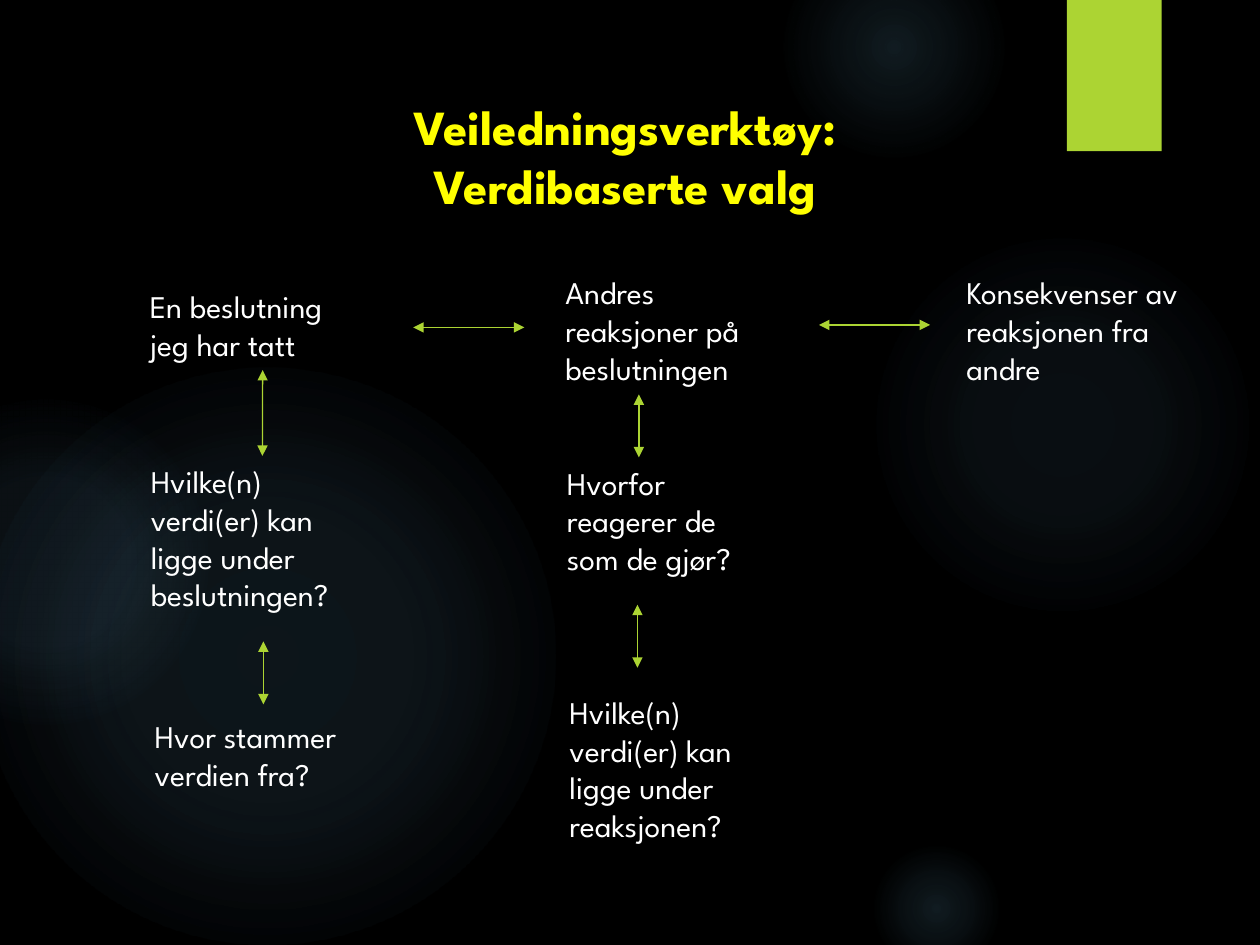
import pptx
import pptx.util
import pptx.dml.color
import pptx.enum.shapes
import pptx.enum.text
import pptx.oxml
import pptx.oxml.ns
from pptx.util import Cm, Pt

THEME = {
    "background": "000000", "accent": "ACD433", "glow": "7AC4F0",
    "body": {"name": "League Spartan", "size": Pt(18), "bold": False, "color": "FFFFFF"},
    "title": {"name": "League Spartan", "size": Pt(28), "bold": True, "color": "FFFF00"},
    "line_width": Pt(0.75),
}

# Content; all places and sizes are in cm
TITLE = (["Veiledningsverktøy:", "Verdibaserte valg"], (7.57, 1.83, 10.06, 2.64))
STEPS = {
    "decision": (["En beslutning", "jeg har tatt"], (2.77, 5.66, 5.05, 1.8)),
    "decision values": (["Hvilke(n) verdi(er) kan ligge under beslutningen?"], (2.79, 9.19, 5, 3.33)),
    "reactions": (["Andres reaksjoner på beslutningen"], (11.15, 5.38, 4.9, 2.57)),
    "value origin": (["Hvor stammer verdien fra?"], (2.87, 14.33, 5, 1.8)),
    "reasons": (["Hvorfor reagerer de som de gjør?"], (11.18, 9.22, 4.6, 2.57)),
    "consequences": (["Konsekvenser av reaksjonen fra andre"], (19.23, 5.38, 4.83, 2.57)),
    "reaction values": (["Hvilke(n) verdi(er) kan ligge under reaksjonen?"], (11.23, 13.84, 4.83, 3.33)),
}
JOINED = [("decision", "decision values")]
DOWN_ARROWS = [(5.31, 12.93), (12.88, 7.95), (12.85, 12.19)]
ACROSS_ARROWS = [(8.33, 6.6), (16.51, 6.55)]
DOWN_LENGTH, ACROSS_LENGTH = 1.27, 2.24
# left, top, diameter, (stop %, opacity %)
GLOWS = [
    (17.5, 4.65, 7.82, [(0, 7), (36, 6), (69, 0)]),
    (15.8, -1.27, 4.45, [(0, 14), (36, 7), (73, 0)]),
    (17.5, 16.94, 2.74, [(0, 14), (36, 7), (66, 0)]),
    (-0.43, 7.42, 11.63, [(0, 11), (36, 10), (75, 0)]),
    (-2.34, 8.05, 6.55, [(0, 8), (36, 8), (72, 0)]),
]
TAB = (21.51, 0, 1.91, 3.05)


def rgb(code):
    return pptx.dml.color.RGBColor.from_string(code)


def add_plain_shape(slide, kind, place):
    shape = slide.shapes.add_shape(kind, *map(Cm, place))
    shape.shadow.inherit = False
    shape.line.fill.background()
    return shape


def add_glow(slide, left, top, diameter, stops):
    glow = add_plain_shape(slide, pptx.enum.shapes.MSO_SHAPE.OVAL, (left, top, diameter, diameter))
    stop_xml = "".join(
        f'<a:gs pos="{position * 1000}"><a:srgbClr val="{THEME["glow"]}">'
        f'<a:alpha val="{opacity * 1000}"/></a:srgbClr></a:gs>'
        for position, opacity in stops)
    gradient = pptx.oxml.parse_xml(
        f'<a:gradFill {pptx.oxml.ns.nsdecls("a")} rotWithShape="1"><a:gsLst>{stop_xml}</a:gsLst>'
        '<a:path path="circle"><a:fillToRect l="50000" t="50000" r="50000" b="50000"/></a:path>'
        '</a:gradFill>')
    glow._element.spPr.find(pptx.oxml.ns.qn("a:prstGeom")).addnext(gradient)


def add_text(slide, lines, place, style, wrap=True, align=None):
    box = slide.shapes.add_textbox(*map(Cm, place))
    frame = box.text_frame
    frame.word_wrap = wrap
    frame.auto_size = pptx.enum.text.MSO_AUTO_SIZE.SHAPE_TO_FIT_TEXT
    frame.text = "\n".join(lines)
    for paragraph in frame.paragraphs:
        paragraph.alignment = align
        font = paragraph.runs[0].font
        for key, value in THEME[style].items():
            if key == "color":
                font.color.rgb = rgb(value)
            else:
                setattr(font, key, value)
    return box


def add_arrow(slide, left=0, top=0, right=0, bottom=0):
    arrow = slide.shapes.add_connector(
        pptx.enum.shapes.MSO_CONNECTOR.STRAIGHT, *map(Cm, (left, top, right, bottom)))
    arrow.line.color.rgb = rgb(THEME["accent"])
    arrow.line.width = THEME["line_width"]
    outline = arrow.line._get_or_add_ln()
    for end in ("headEnd", "tailEnd"):
        outline.append(pptx.oxml.parse_xml(
            f'<a:{end} {pptx.oxml.ns.nsdecls("a")} type="triangle"/>'))
    arrow._element.spPr.append(
        pptx.oxml.parse_xml(f'<a:effectLst {pptx.oxml.ns.nsdecls("a")}/>'))
    return arrow


def main():
    deck = pptx.Presentation()
    deck.slide_width, deck.slide_height = Cm(25.4), Cm(19.05)
    slide = deck.slides.add_slide(deck.slide_layouts[6])
    slide.background.fill.solid()
    slide.background.fill.fore_color.rgb = rgb(THEME["background"])

    # Backdrop
    for glow in GLOWS:
        add_glow(slide, *glow)
    tab = add_plain_shape(slide, pptx.enum.shapes.MSO_SHAPE.RECTANGLE, TAB)
    tab.fill.solid()
    tab.fill.fore_color.rgb = rgb(THEME["accent"])

    # Steps
    steps = {key: add_text(slide, lines, place, "body")
             for key, (lines, place) in STEPS.items()}

    # Arrows between the steps
    for upper, lower in JOINED:
        arrow = add_arrow(slide)
        arrow.begin_connect(steps[upper], 2)
        arrow.end_connect(steps[lower], 0)
    for x, y in DOWN_ARROWS:
        add_arrow(slide, x, y, x, y + DOWN_LENGTH)
    for x, y in ACROSS_ARROWS:
        add_arrow(slide, x, y, x + ACROSS_LENGTH, y)

    # Title
    add_text(slide, *TITLE, "title", wrap=False, align=pptx.enum.text.PP_ALIGN.CENTER)
    deck.save("out.pptx")


if __name__ == "__main__":
    main()
